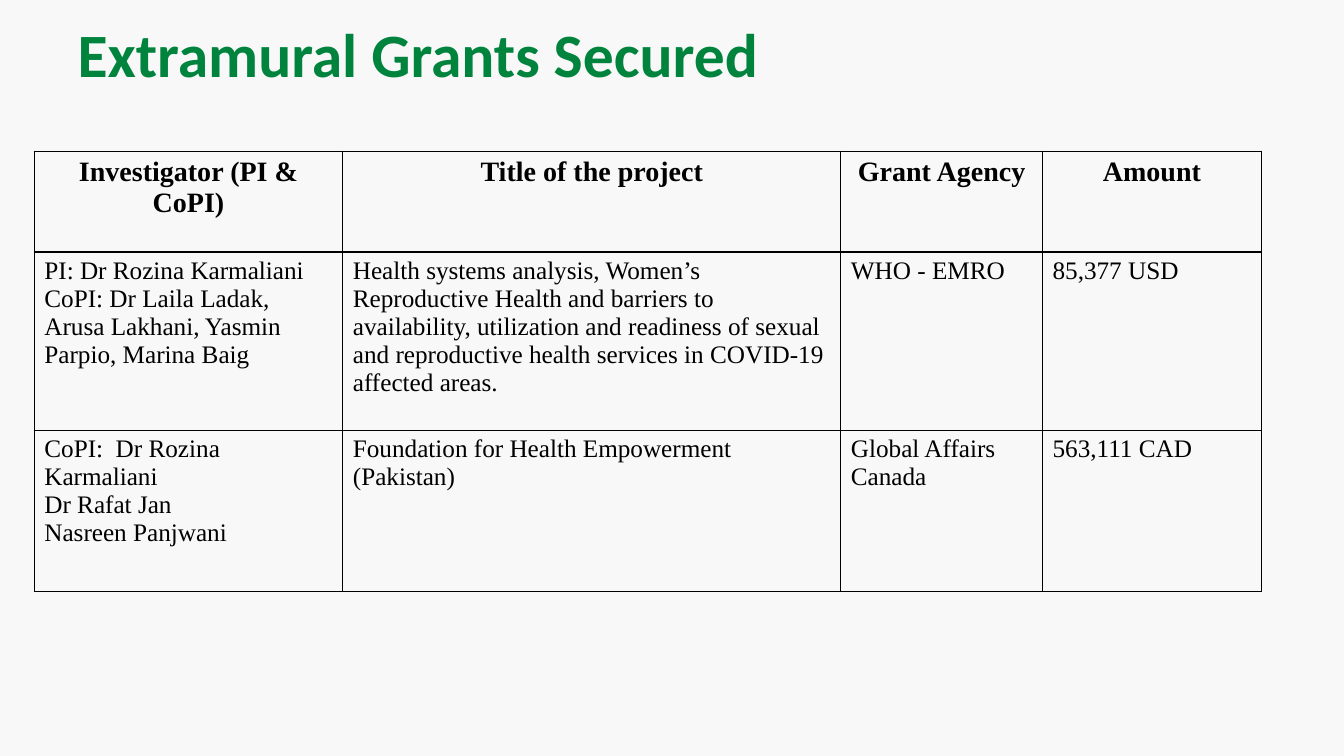
from pptx import Presentation
from pptx.dml.color import RGBColor
from pptx.enum.text import MSO_ANCHOR, MSO_AUTO_SIZE, PP_ALIGN
from pptx.oxml.ns import qn
from pptx.util import Inches, Pt
from lxml import etree

LEFT, CENTER = PP_ALIGN.LEFT, PP_ALIGN.CENTER
MIDDLE = MSO_ANCHOR.MIDDLE
NO_AUTOFIT = MSO_AUTO_SIZE.NONE
TITLE_ONLY = 5

COLUMN_WIDTHS = [3.06, 4.94, 2, 2.17]
ROW_HEIGHTS = [1, 1.77, 1.6]
GRANTS = [
    ["Investigator (PI & CoPI)", "Title of the project", "Grant Agency", "Amount"],
    ["PI: Dr Rozina Karmaliani\n"
     "CoPI: Dr Laila Ladak, Arusa Lakhani, Yasmin Parpio, Marina Baig",
     "Health systems analysis, Women’s Reproductive Health and barriers to "
     "availability, utilization and readiness of sexual and reproductive health "
     "services in COVID-19 affected areas.",
     "WHO - EMRO", "85,377 USD"],
    ["CoPI:  Dr Rozina Karmaliani\nDr Rafat Jan\nNasreen Panjwani",
     "Foundation for Health Empowerment (Pakistan)",
     "Global Affairs Canada", "563,111 CAD"],
]


def color(hex_string):
    return RGBColor.from_string(hex_string)


class GrantSlide:
    title_font, table_font = "Calibri", "Times New Roman"
    green, black, background = "00843D", "000000", "F8F8F8"

    def __init__(self, presentation):
        self.slide = presentation.slides.add_slide(presentation.slide_layouts[TITLE_ONLY])
        fill = self.slide.background.fill
        fill.solid()
        fill.fore_color.rgb = color(self.background)

    def format_text(self, text_frame, font_name, size, hex_string, bold, alignment):
        for paragraph in text_frame.paragraphs:
            paragraph.alignment = alignment
            for run in paragraph.runs:
                font = run.font
                font.name, font.size, font.bold = font_name, Pt(size), bold
                font.color.rgb = color(hex_string)

    def add_title(self, text, left, top, width, height):
        title = self.slide.shapes.title
        title.left, title.top = Inches(left), Inches(top)
        title.width, title.height = Inches(width), Inches(height)
        text_frame = title.text_frame
        text_frame.text = text
        text_frame.auto_size = NO_AUTOFIT
        text_frame.vertical_anchor = MIDDLE
        self.format_text(text_frame, self.title_font, 44, self.green, True, LEFT)

    def add_borders(self, cell, width=1):
        properties = cell._tc.get_or_add_tcPr()
        for side in ("a:lnL", "a:lnR", "a:lnT", "a:lnB"):
            line = etree.SubElement(properties, qn(side), w=str(Pt(width)))
            fill = etree.SubElement(line, qn("a:solidFill"))
            etree.SubElement(fill, qn("a:srgbClr"), val=self.black)

    def add_table(self, rows, left, top, column_widths, row_heights):
        frame = self.slide.shapes.add_table(
            len(rows), len(column_widths), Inches(left), Inches(top),
            Inches(sum(column_widths)), Inches(sum(row_heights)))
        table = frame.table
        table.horz_banding = False
        for column, width in zip(table.columns, column_widths):
            column.width = Inches(width)
        for row_index, (row, height, texts) in enumerate(zip(table.rows, row_heights, rows)):
            row.height = Inches(height)
            header = row_index == 0
            for cell, text in zip(row.cells, texts):
                cell.text_frame.text = text
                self.format_text(cell.text_frame, self.table_font, 20 if header else 18,
                                 self.black, header, CENTER if header else LEFT)
                self.add_borders(cell)
                cell.fill.background()


def main():
    presentation = Presentation()
    presentation.slide_width = Inches(13.33)
    presentation.slide_height = Inches(7.5)

    grant_slide = GrantSlide(presentation)

    # Heading
    grant_slide.add_title("Extramural Grants Secured", 0.67, 0.05, 12, 0.95)

    # Grants table
    grant_slide.add_table(GRANTS, 0.34, 1.5, COLUMN_WIDTHS, ROW_HEIGHTS)

    presentation.save("out.pptx")


if __name__ == "__main__":
    main()
